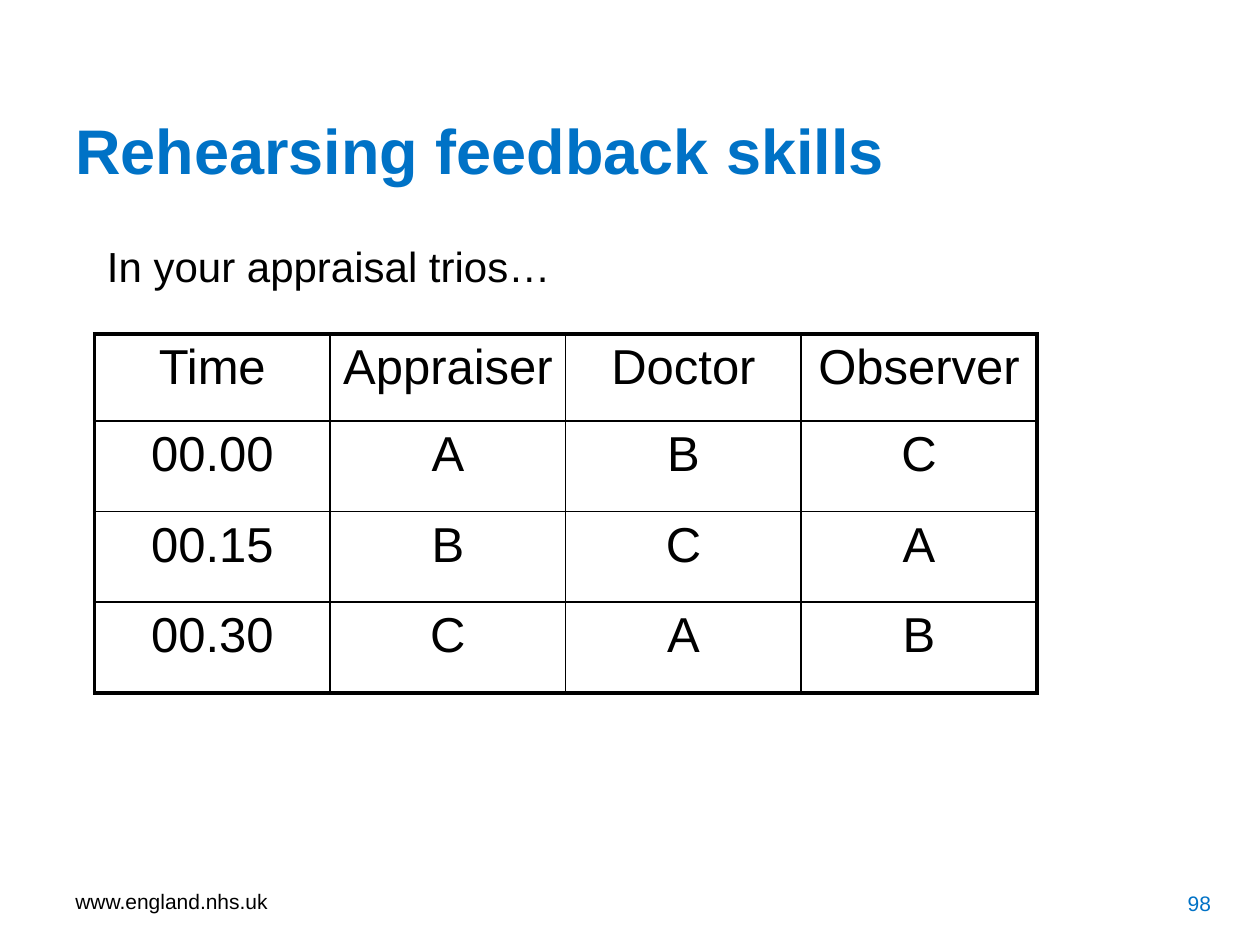
from dataclasses import dataclass

from lxml import etree
from pptx import Presentation
from pptx import util as u
from pptx.dml.color import RGBColor
from pptx.enum import text
from pptx.oxml import ns
from pptx.slide import Slide

BLACK = RGBColor(0x00, 0x00, 0x00)
BLUE = RGBColor(0x00, 0x72, 0xC6)
COLUMNS, ROWS = 40, 30
OUTER, INNER = 2.25, 1

SCHEDULE = [
    ["Time", "Appraiser", "Doctor", "Observer"],
    ["00.00", "A", "B", "C"],
    ["00.15", "B", "C", "A"],
    ["00.30", "C", "A", "B"],
]


@dataclass
class Page:
    slide: Slide
    width: int
    height: int
    font: str = "Arial"

    def across(self, columns):
        return u.Emu(round(self.width * columns / COLUMNS))

    def down(self, rows):
        return u.Emu(round(self.height * rows / ROWS))

    def area(self, left, top, width, height):
        return self.across(left), self.down(top), self.across(width), self.down(height)

    def set_words(self, frame, words, size, color=BLACK, bold=False, align=text.PP_ALIGN.LEFT):
        frame.text = words
        paragraph = frame.paragraphs[0]
        paragraph.alignment = align
        font = paragraph.runs[0].font
        font.name, font.size, font.bold = self.font, u.Pt(size), bold
        font.color.rgb = color

    def label(self, words, area, size, anchor=text.MSO_ANCHOR.MIDDLE, **style):
        frame = self.slide.shapes.add_textbox(*self.area(*area)).text_frame
        frame.word_wrap = True
        frame.vertical_anchor = anchor
        self.set_words(frame, words, size, **style)

    def border(self, cell, side, points):
        line = etree.SubElement(cell._tc.get_or_add_tcPr(), ns.qn(f"a:ln{side}"), w=str(u.Pt(points)))
        fill = etree.SubElement(line, ns.qn("a:solidFill"))
        etree.SubElement(fill, ns.qn("a:srgbClr"), val=str(BLACK))

    def table(self, values, left, top, column_width, row_heights, size):
        last_row, last_column = len(values) - 1, len(values[0]) - 1
        area = self.area(left, top, column_width * len(values[0]), sum(row_heights))
        table = self.slide.shapes.add_table(len(values), len(values[0]), *area).table
        table.first_row = table.horz_banding = False
        for column in table.columns:
            column.width = self.across(column_width)
        for r, (row, height) in enumerate(zip(values, row_heights)):
            table.rows[r].height = self.down(height)
            for c, words in enumerate(row):
                cell = table.cell(r, c)
                cell.margin_left = cell.margin_right = u.Inches(0.08)
                self.set_words(cell.text_frame, words, size, align=text.PP_ALIGN.CENTER)
                edges = {"L": c == 0, "R": c == last_column, "T": r == 0, "B": r == last_row}
                for side, outer in edges.items():
                    self.border(cell, side, OUTER if outer else INNER)
                cell.fill.background()


def main():
    deck = Presentation()
    deck.slide_width, deck.slide_height = u.Inches(10), u.Inches(7.5)
    slide = deck.slides.add_slide(deck.slide_layouts[6])
    page = Page(slide, deck.slide_width, deck.slide_height)
    page.label("www.england.nhs.uk", (2, 27.8, 9.32, 1.6), 12)
    page.label("Rehearsing feedback skills", (2, 3.28, 32.2, 2.92), 36, color=BLUE, bold=True)
    page.table(SCHEDULE, 3, 10.6, 7.48, [2.76, 2.88, 2.88, 2.88], 28)
    page.label("In your appraisal trios…", (3, 7.44, 30.08, 3.64), 24, anchor=text.MSO_ANCHOR.TOP)
    page.label("98", (29.52, 27.88, 9.32, 1.6), 12, color=BLUE, align=text.PP_ALIGN.RIGHT)
    deck.save("out.pptx")


if __name__ == "__main__":
    main()
